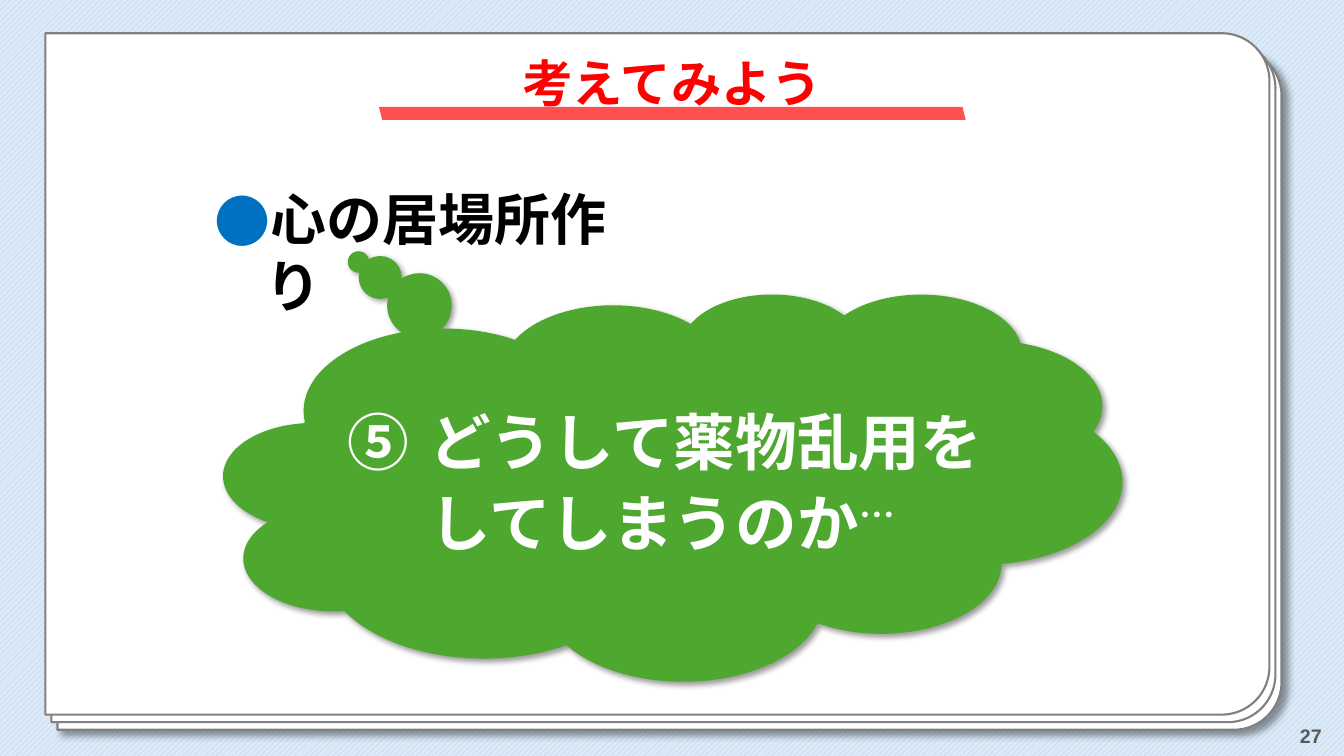
from lxml.etree import SubElement
from pptx import Presentation
from pptx.dml.color import RGBColor
from pptx.enum.dml import MSO_PATTERN
from pptx.enum.shapes import MSO_SHAPE
from pptx.enum.text import MSO_ANCHOR, MSO_AUTO_SIZE, PP_ALIGN
from pptx.oxml.ns import qn
from pptx.util import Inches, Pt

WIDTH, HEIGHT = Inches(13.33), Inches(7.5)
JAPANESE = "Noto Sans CJK JP"
COLORS = {
    "stripe": "A6CAEC", "sky": "DCEAF7", "paper": "FFFFFF", "edge": "808080",
    "title": "FF0000", "underline": "FF5050", "cloud": "4EA72E",
    "bullet": "0070C0", "text": "000000", "number": "595959", "shadow": "000000",
}


def color(name):
    return RGBColor.from_string(COLORS[name])


def area(left, top, width, height):
    """Turn percentages of the slide into lengths."""
    return [round(share * side / 100) for share, side in
            zip((left, top, width, height), (WIDTH, HEIGHT) * 2)]


def place(box, frame):
    box.left, box.top, box.width, box.height = frame


def add_filled(page, kind, frame, fill):
    box = page.shapes.add_shape(kind, *frame)
    box.shadow.inherit = False
    box.fill.solid()
    box.fill.fore_color.rgb = color(fill)
    box.line.fill.background()
    return box


def add_shadow(box, distance):
    effects = box._element.spPr.find(qn("a:effectLst"))
    shadow = SubElement(effects, qn("a:outerShdw"), blurRad=str(Pt(4)),
                        dist=str(Pt(distance)), dir="2700000",
                        algn="tl", rotWithShape="0")
    shade = SubElement(shadow, qn("a:srgbClr"), val=COLORS["shadow"])
    SubElement(shade, qn("a:alpha"), val="40000")


def style(para, size, ink, align=PP_ALIGN.LEFT, name="Arial", spacing=1.0):
    para.alignment = align
    para.line_spacing = spacing
    para.space_before = Pt(0)
    para.font.size = Pt(size)
    para.font.bold = True
    para.font.name = name
    para.font.color.rgb = color(ink)
    SubElement(para.font._rPr, qn("a:ea"), typeface=JAPANESE)


def hang(para, indent):
    """Set a hanging indent and return the paragraph's properties."""
    props = para._p.get_or_add_pPr()
    props.set("marL", str(Inches(indent)))
    props.set("indent", str(-Inches(indent)))
    return props


def add_panel(page, step):
    left, top, width, height = area(3.38 + 0.45 * step, 4.4 + step, 91.07, 90.13)
    # The frame is given before its quarter turn about the centre
    frame = (left + (width - height) // 2, top + (height - width) // 2, height, width)
    panel = add_filled(page, MSO_SHAPE.ROUND_2_SAME_RECTANGLE, frame, "paper")
    panel.rotation = 90
    panel.adjustments[0] = 0.07
    panel.line.color.rgb = color("edge")
    panel.line.width = Pt(1.5)
    return panel


def add_title(page, text):
    title = page.shapes.title
    page.shapes._spTree.append(title._element)  # bring in front of the panels
    place(title, area(28.2, 4.4, 43.66, 11.33))
    title.text_frame.text = text
    title.text_frame.auto_size = MSO_AUTO_SIZE.NONE
    title.text_frame.vertical_anchor = MSO_ANCHOR.BOTTOM
    style(title.text_frame.paragraphs[0], 36, "title", PP_ALIGN.CENTER, spacing=0.9)


def add_thought(page, text, ending):
    cloud = add_filled(page, MSO_SHAPE.CLOUD_CALLOUT,
                       area(16.65, 38.8, 66.84, 51.2), "cloud")
    cloud.adjustments[0], cloud.adjustments[1] = -0.35, -0.581
    add_shadow(cloud, 3)
    frame = cloud.text_frame
    frame.margin_left = frame.margin_right = frame.margin_top = frame.margin_bottom = 0
    frame.word_wrap = False
    frame.vertical_anchor = MSO_ANCHOR.MIDDLE
    para = frame.paragraphs[0]
    para.text = text
    span = para.add_run()
    span.text = ending
    span.font._rPr.set("baseline", "30000")
    SubElement(hang(para, 0.81), qn("a:buAutoNum"), type="circleNumDbPlain", startAt="5")
    style(para, 44, "paper", spacing=1.1)


def add_list(page, text):
    body = page.placeholders[1]
    page.shapes._spTree.append(body._element)
    place(body, area(15.23, 23.73, 34.73, 10.27))
    frame = body.text_frame
    frame.text = text
    frame.word_wrap = False
    frame.auto_size = MSO_AUTO_SIZE.SHAPE_TO_FIT_TEXT
    frame.vertical_anchor = MSO_ANCHOR.TOP
    para = frame.paragraphs[0]
    props = hang(para, 0.5)
    SubElement(SubElement(props, qn("a:buClr")), qn("a:srgbClr"), val=COLORS["bullet"])
    SubElement(props, qn("a:buFont"), typeface=JAPANESE)
    SubElement(props, qn("a:buChar"), char="●")
    para.space_after = Pt(30)
    style(para, 40, "text", name=JAPANESE)


def add_underline(page):
    underline = add_filled(page, MSO_SHAPE.PARALLELOGRAM,
                           area(28.2, 14.13, 43.66, 1.73), "underline")
    underline._element.spPr.xfrm.set("flipH", "1")


def add_page_number(page, number):
    box = page.shapes.add_textbox(*area(76.59, 94.67, 22.5, 5.33))
    box.text_frame.word_wrap = True
    box.text_frame.vertical_anchor = MSO_ANCHOR.MIDDLE
    box.text_frame.text = number
    style(box.text_frame.paragraphs[0], 14, "number", PP_ALIGN.RIGHT)


def main():
    deck = Presentation()
    deck.slide_width, deck.slide_height = WIDTH, HEIGHT
    page = deck.slides.add_slide(deck.slide_layouts[1])

    # Striped background
    backdrop = page.background.fill
    backdrop.patterned()
    backdrop.pattern = MSO_PATTERN.WIDE_UPWARD_DIAGONAL
    backdrop.fore_color.rgb = color("stripe")
    backdrop.back_color.rgb = color("sky")

    # Stack of paper, rearmost sheet first
    sheets = [add_panel(page, step) for step in (2, 1, 0)]
    add_shadow(sheets[0], 5)

    # Content
    add_page_number(page, "27")
    add_title(page, "考えてみよう")
    add_thought(page, "どうして薬物乱用を\vしてしまうのか", "…")
    add_list(page, "心の居場所作り")
    add_underline(page)
    deck.save("out.pptx")


if __name__ == "__main__":
    main()
